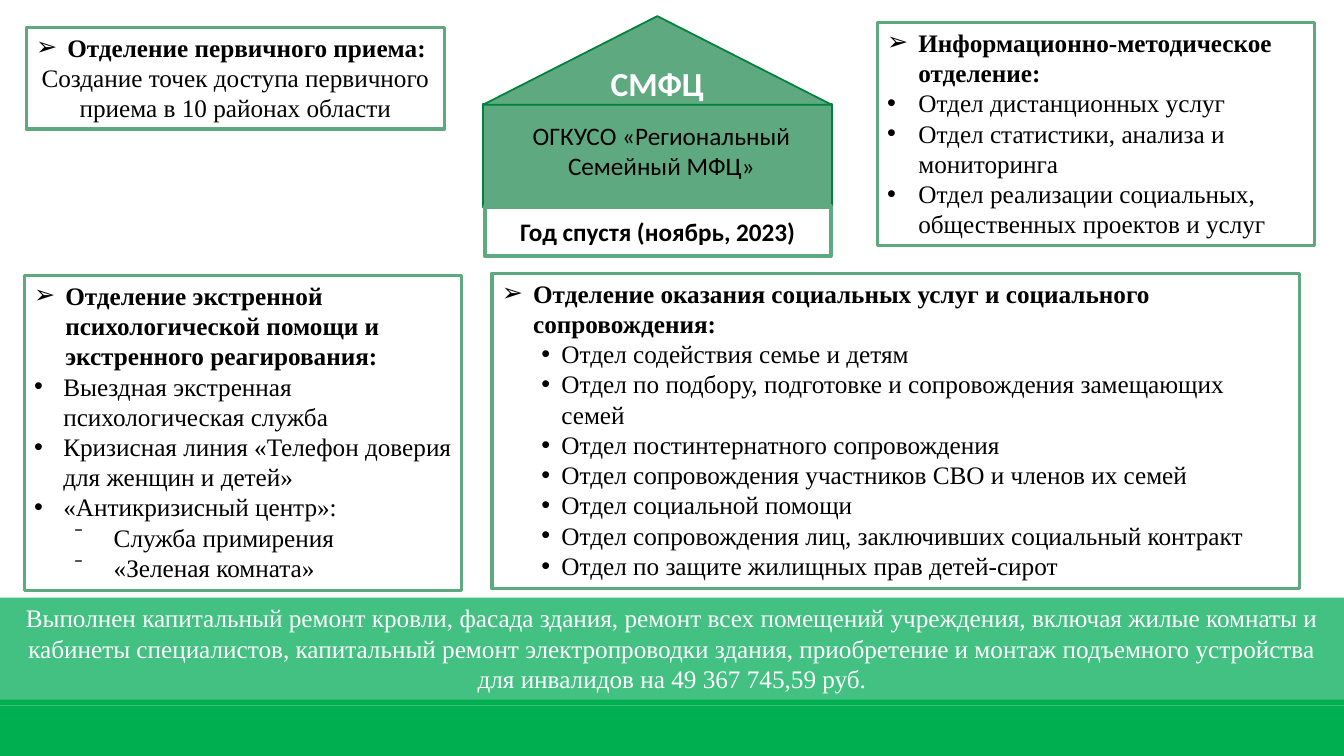
from dataclasses import dataclass
from typing import Any, Optional

from lxml.etree import SubElement
from pptx import Presentation
from pptx.dml.color import RGBColor
from pptx.enum.shapes import MSO_SHAPE
from pptx.enum.text import MSO_ANCHOR, MSO_AUTO_SIZE, PP_ALIGN
from pptx.oxml.ns import qn
from pptx.util import Inches, Pt


@dataclass(frozen=True)
class Theme:
    black: str = "000000"
    white: str = "FFFFFF"
    sage: str = "5FA980"
    forest: str = "00823B"
    mint: str = "43C182"
    footer: str = "00B050"
    sans: str = "Calibri"
    serif: str = "Times New Roman"
    body_size: int = 18
    roof_size: int = 24
    thin: float = 1.25
    medium: float = 2.25
    thick: float = 3


@dataclass(frozen=True)
class Area:
    """Left, top, width and height in percent of the slide's size."""
    left: float
    top: float
    width: float
    height: float


@dataclass(frozen=True)
class Line:
    """A paragraph; margin and hanging indent are in inches."""
    text: str
    bold: bool = False
    centred: bool = False
    bullet: str = ""
    margin: float = 0
    hanging: float = 0


@dataclass(frozen=True)
class Block:
    area: Area
    lines: tuple[Line, ...] = ()
    fill: Optional[str] = None
    border: Optional[str] = None
    border_width: float = 0
    font: str = Theme.serif
    size: int = Theme.body_size
    color: str = Theme.black
    middle: bool = False
    grows: bool = False
    preset: MSO_SHAPE = MSO_SHAPE.RECTANGLE


THEME = Theme()
SLIDE_WIDTH, SLIDE_HEIGHT = Inches(13.33), Inches(7.5)


def panel(area: Area, heading: str, *lines: Line, fill: Optional[str] = None) -> Block:
    """A bordered department box with an arrow-marked heading."""
    first = Line(heading, bold=True, bullet="➢", margin=0.31, hanging=0.31)
    return Block(area, (first, *lines), fill, THEME.sage, THEME.medium, grows=True)


def items(texts: list[str], margin: float, hanging: float, bullet: str = "•") -> list[Line]:
    return [Line(text, bullet=bullet, margin=margin, hanging=hanging) for text in texts]


def centred(text: str, bold: bool = False) -> tuple[Line, ...]:
    return (Line(text, bold=bold, centred=True),)


FOOTER = [
    Block(Area(0, 93.33, 100, 6.67), fill=THEME.footer),
    Block(Area(0, 92.4, 100, 0.93), fill=THEME.footer),
]
HOUSE = [
    Block(Area(35.93, 13.73, 25.96, 13.73), fill=THEME.sage,
          border=THEME.forest, border_width=THEME.thin),
    Block(Area(35.93, 2.13, 25.96, 11.73), centred("СМФЦ", True), THEME.sage,
          THEME.forest, THEME.thin, THEME.sans, THEME.roof_size, THEME.white,
          middle=True, preset=MSO_SHAPE.ISOSCELES_TRIANGLE),
    Block(Area(36.08, 27.33, 25.73, 6.53), centred("Год спустя (ноябрь, 2023)", True),
          THEME.white, THEME.sage, THEME.thick, THEME.sans, middle=True),
]
TITLE = Block(
    Area(36.61, 15.2, 25.21, 9.47),
    (*centred("ОГКУСО «Региональный"), *centred("Семейный МФЦ»")),
    font=THEME.sans, grows=True)
PANELS = [
    panel(Area(1.95, 3.6, 31.13, 13.47), "Отделение первичного приема:",
          *centred("Создание точек доступа первичного приема в 10 районах области"),
          fill=THEME.white),
    panel(Area(1.8, 36.4, 32.56, 41.73),
          "Отделение экстренной психологической помощи и экстренного реагирования:",
          *items(["Выездная экстренная психологическая служба",
                  "Кризисная линия «Телефон доверия для женщин и детей»",
                  "«Антикризисный центр»:"], 0.29, 0.29),
          *items(["Служба примирения", "«Зеленая комната»"], 0.79, 0.39, "⁻")),
    panel(Area(65.27, 2.93, 32.56, 29.6), "Информационно-методическое отделение:",
          *items(["Отдел дистанционных услуг",
                  "Отдел статистики, анализа и мониторинга",
                  "Отдел реализации социальных, общественных проектов и услуг"], 0.31, 0.31)),
    panel(Area(36.61, 36.13, 60.09, 41.73),
          "Отделение оказания социальных услуг и социального сопровождения:",
          *items(["Отдел содействия семье и детям",
                  "Отдел по подбору, подготовке и сопровождения замещающих семей",
                  "Отдел постинтернатного сопровождения",
                  "Отдел сопровождения участников СВО и членов их семей",
                  "Отдел социальной помощи",
                  "Отдел сопровождения лиц, заключивших социальный контракт",
                  "Отдел по защите жилищных прав детей-сирот"], 0.59, 0.2)),
]
BANNER = Block(
    Area(0, 79.07, 100, 13.47),
    centred("Выполнен капитальный ремонт кровли, фасада здания, ремонт всех помещений "
            "учреждения, включая жилые комнаты и кабинеты специалистов, капитальный ремонт "
            "электропроводки здания, приобретение и монтаж подъемного устройства "
            "для инвалидов на 49 367 745,59 руб."),
    THEME.mint, color=THEME.white, grows=True)


def apply(target: Any, values: dict[str, Any]) -> None:
    for name, value in values.items():
        setattr(target, name, value)


def frame(area: Area) -> dict[str, int]:
    return {
        "left": round(SLIDE_WIDTH * area.left / 100),
        "top": round(SLIDE_HEIGHT * area.top / 100),
        "width": round(SLIDE_WIDTH * area.width / 100),
        "height": round(SLIDE_HEIGHT * area.height / 100),
    }


def add_bullet(para: Any, line: Line) -> None:
    properties = para._p.get_or_add_pPr()
    properties.set("marL", str(Inches(line.margin)))
    properties.set("indent", str(-Inches(line.hanging)))
    SubElement(properties, qn("a:buFont")).set("typeface", "Arial")
    SubElement(properties, qn("a:buChar")).set("char", line.bullet)


def write(box: Any, block: Block) -> None:
    text_frame = box.text_frame
    apply(text_frame, {
        "word_wrap": True,
        "vertical_anchor": MSO_ANCHOR.MIDDLE if block.middle else MSO_ANCHOR.TOP,
        "auto_size": MSO_AUTO_SIZE.SHAPE_TO_FIT_TEXT if block.grows else MSO_AUTO_SIZE.NONE,
    })
    for index, line in enumerate(block.lines):
        para = text_frame.add_paragraph() if index else text_frame.paragraphs[0]
        para.alignment = PP_ALIGN.CENTER if line.centred else PP_ALIGN.LEFT
        if line.bullet:
            add_bullet(para, line)
        span = para.add_run()
        span.text = line.text
        apply(span.font, {"name": block.font, "size": Pt(block.size), "bold": line.bold})
        span.font.color.rgb = RGBColor.from_string(block.color)


def draw(page: Any, block: Block) -> None:
    box = page.shapes.add_shape(block.preset, **frame(block.area))
    box.shadow.inherit = False
    if block.fill:
        box.fill.solid()
        box.fill.fore_color.rgb = RGBColor.from_string(block.fill)
    else:
        box.fill.background()
    if block.border:
        box.line.color.rgb = RGBColor.from_string(block.border)
        box.line.width = Pt(block.border_width)
    else:
        box.line.fill.background()
    if block.lines:
        write(box, block)


def place_title(page: Any, block: Block) -> None:
    """Format the title placeholder and lift it above the house."""
    title = page.shapes.title
    apply(title, frame(block.area))
    write(title, block)
    title.element.getparent().append(title.element)


def main() -> None:
    deck = Presentation()
    apply(deck, {"slide_width": SLIDE_WIDTH, "slide_height": SLIDE_HEIGHT})
    page = deck.slides.add_slide(deck.slide_layouts.get_by_name("Title Only"))
    for block in FOOTER + HOUSE:
        draw(page, block)
    place_title(page, TITLE)
    for block in [*PANELS, BANNER]:
        draw(page, block)
    deck.save("out.pptx")


if __name__ == "__main__":
    main()
